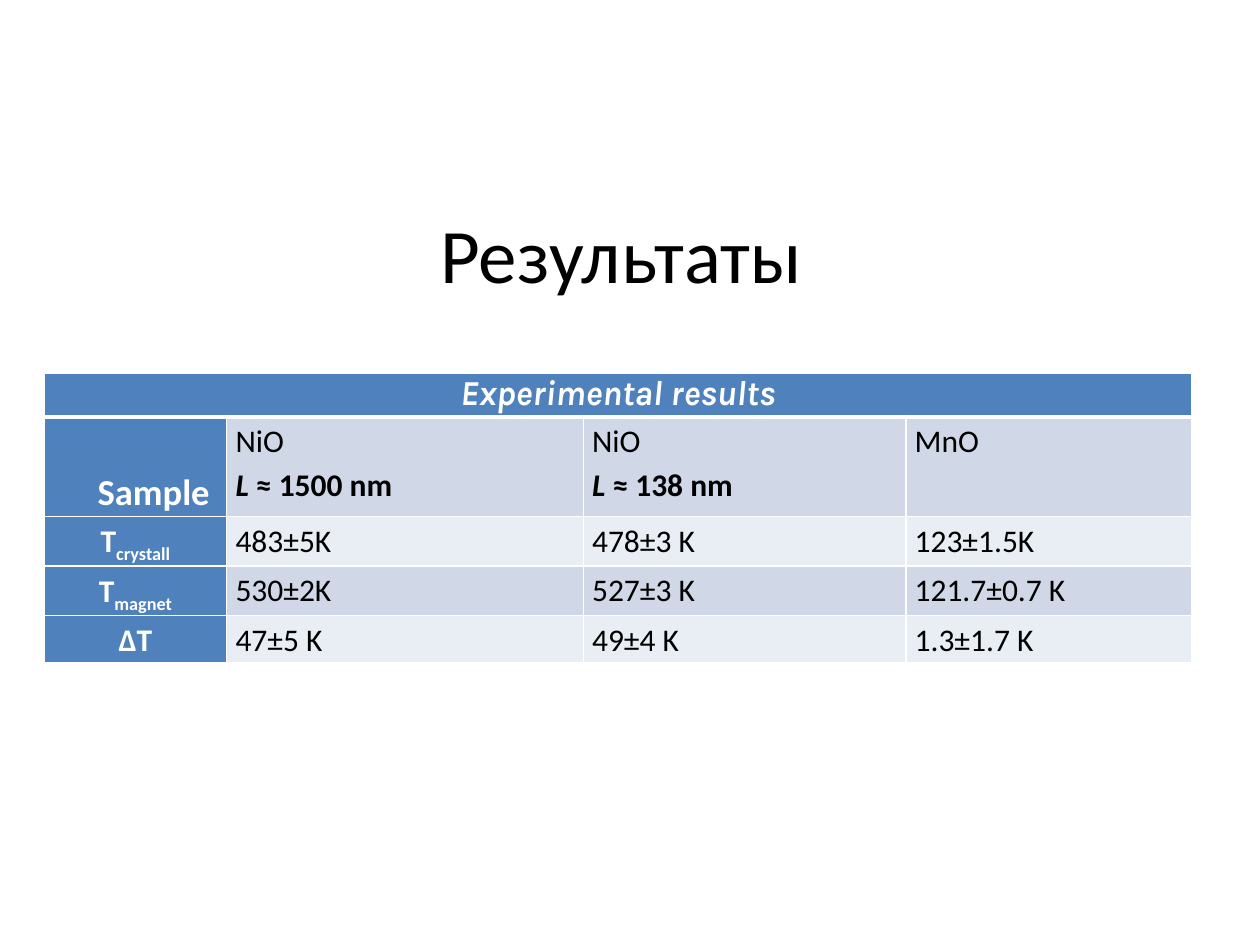
from lxml.etree import SubElement
from pptx import Presentation
from pptx.dml.color import RGBColor
from pptx.enum.text import MSO_ANCHOR, PP_ALIGN
from pptx.oxml.ns import qn
from pptx.util import Inches, Pt

COLORS = {"header": "4F81BD", "odd": "D0D8E8", "even": "E9EDF4",
          "light": "FFFFFF", "dark": "000000"}
COLUMN_WIDTHS = [1.45, 2.83, 2.56, 2.27]
ROW_HEIGHTS = [0.35, 0.79, 0.38, 0.38, 0.38]
SUBSCRIPT = "-25000"

HEADING = "Experimental results"
ROWS = [
    [[[("Sample\u00a0", "sub")]],
     [[("NiO", "")], [("L", "bold italic"), (" ≈ 1500 nm", "bold")]],
     [[("NiO", "")], [("L", "bold italic"), (" ≈ 138 nm", "bold")]],
     [[("MnO", "")]]],
    [[[("T", ""), ("crystall", "sub")]],
     [[("483±5K", "")]], [[("478±3 K", "")]], [[("123±1.5K", "")]]],
    [[[("T", ""), ("magnet", "sub")]],
     [[("530±2K", "")]], [[("527±3 K", "")]], [[("121.7±0.7 K", "")]]],
    [[[("ΔT", "")]],
     [[("47±5 K", "")]], [[("49±4 K", "")]], [[("1.3±1.7 K", "")]]],
]


def style_span(span, size, color, bold=False, italic=False, name="Calibri"):
    span.font.name = name
    span.font.size = Pt(size)
    span.font.bold = bold
    span.font.italic = italic
    span.font.color.rgb = RGBColor.from_string(COLORS[color])


def style_cell(cell, fill, bottom=1):
    cell.margin_left = cell.margin_right = Inches(0.07)
    cell.margin_top = cell.margin_bottom = 0
    properties = cell._tc.get_or_add_tcPr()
    for side, width in (("L", 1), ("R", 1), ("T", 1), ("B", bottom)):
        line = SubElement(properties, qn(f"a:ln{side}"), w=str(Pt(width)))
        solid = SubElement(line, qn("a:solidFill"))
        SubElement(solid, qn("a:srgbClr"), val=COLORS["light"])
    cell.fill.solid()
    cell.fill.fore_color.rgb = RGBColor.from_string(COLORS[fill])


def fill_cell(cell, paragraphs, size, color, align, bold):
    frame = cell.text_frame
    for index, spans in enumerate(paragraphs):
        para = frame.add_paragraph() if index else frame.paragraphs[0]
        para.alignment = align
        para.line_spacing = 1.15
        for text, style in spans:
            span = para.add_run()
            span.text = text
            style_span(span, size, color, bold or "bold" in style, "italic" in style)
            if "sub" in style:
                span._r.get_or_add_rPr().set("baseline", SUBSCRIPT)


def add_title(page, left, top, width, height):
    box = page.shapes.add_textbox(left, top, width, height)
    frame = box.text_frame
    frame.word_wrap = True
    frame.vertical_anchor = MSO_ANCHOR.MIDDLE
    frame.text = "Результаты"
    para = frame.paragraphs[0]
    para.alignment = PP_ALIGN.CENTER
    style_span(para.runs[0], 44, "dark")


def add_results(page, left, top, width, height):
    table = page.shapes.add_table(len(ROW_HEIGHTS), len(COLUMN_WIDTHS),
                                  left, top, width, height).table
    for column, share in zip(table.columns, COLUMN_WIDTHS):
        column.width = int(width * share / sum(COLUMN_WIDTHS))
    for row, share in zip(table.rows, ROW_HEIGHTS):
        row.height = int(height * share / sum(ROW_HEIGHTS))

    heading = table.cell(0, 0)
    heading.merge(table.cell(0, len(COLUMN_WIDTHS) - 1))
    for cell in table.rows[0].cells:
        style_cell(cell, "header", bottom=3)
    heading.text_frame.text = HEADING
    para = heading.text_frame.paragraphs[0]
    para.alignment = PP_ALIGN.CENTER
    style_span(para.runs[0], 20, "light", True, True, "Karla")

    for row, contents in enumerate(ROWS, start=1):
        band = "odd" if row % 2 else "even"
        for column, paragraphs in enumerate(contents):
            cell = table.cell(row, column)
            is_label = column == 0
            is_sample = is_label and row == 1
            style_cell(cell, "header" if is_label else band)
            align = PP_ALIGN.CENTER if is_label else PP_ALIGN.LEFT
            fill_cell(cell, paragraphs,
                      36 if is_sample else 18,
                      "light" if is_label else "dark",
                      PP_ALIGN.RIGHT if is_sample else align,
                      is_label)


def main():
    deck = Presentation()
    deck.slide_width, deck.slide_height = Inches(10), Inches(7.5)
    page = deck.slides.add_slide(deck.slide_layouts[6])
    add_title(page, Inches(0.43), Inches(1.47), Inches(9), Inches(1.07))
    add_results(page, Inches(0.35), Inches(2.96),
                Inches(sum(COLUMN_WIDTHS)), Inches(sum(ROW_HEIGHTS)))
    deck.save("out.pptx")


if __name__ == "__main__":
    main()
